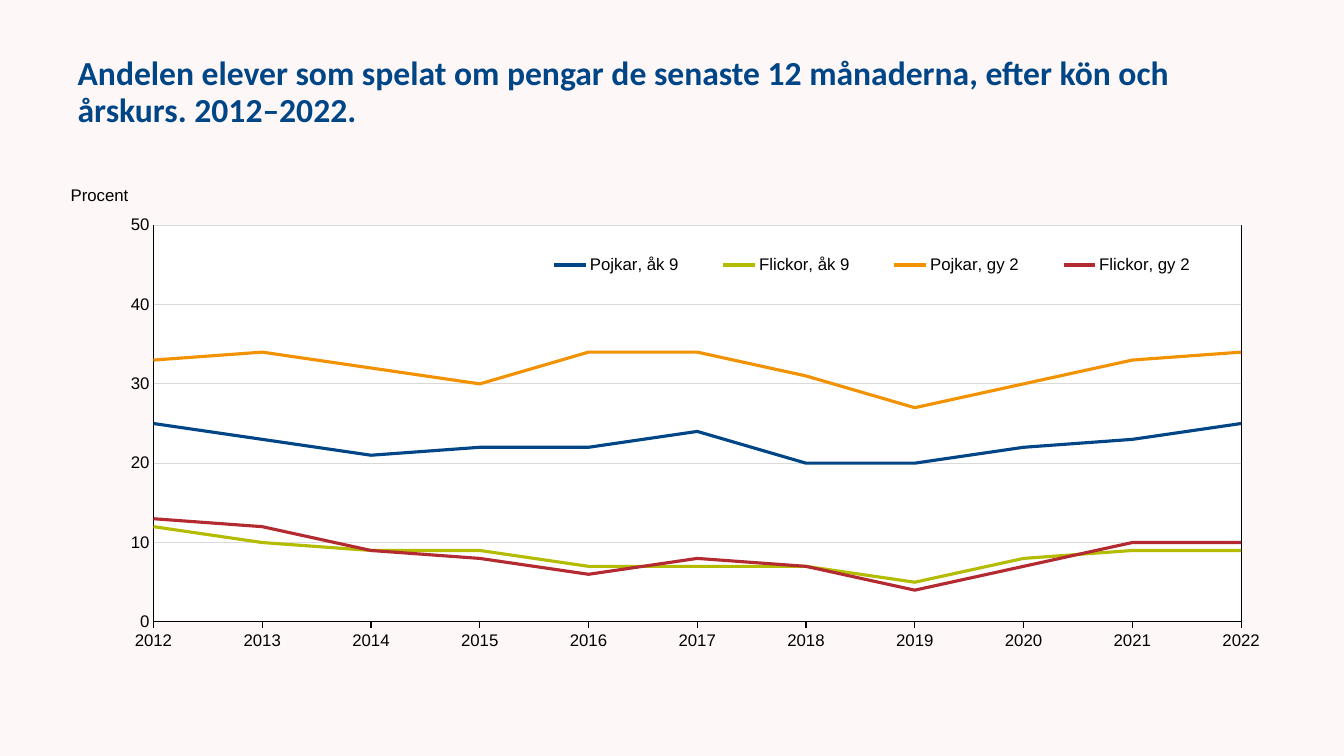
from lxml.etree import SubElement
from pptx import Presentation
from pptx.chart.data import CategoryChartData
from pptx.dml.color import RGBColor
from pptx.enum.chart import XL_CHART_TYPE, XL_LEGEND_POSITION, XL_TICK_MARK
from pptx.enum.text import MSO_ANCHOR, MSO_AUTO_SIZE, PP_ALIGN
from pptx.oxml import parse_xml
from pptx.oxml.ns import nsdecls, qn
from pptx.util import Inches, Pt

YEARS = [str(year) for year in range(2012, 2023)]
GROUPS = [
    ("Pojkar, åk 9", "004687", [25, 23, 21, 22, 22, 24, 20, 20, 22, 23, 25]),
    ("Flickor, åk 9", "B3BC00", [12, 10, 9, 9, 7, 7, 7, 5, 8, 9, 9]),
    ("Pojkar, gy 2", "F29200", [33, 34, 32, 30, 34, 34, 31, 27, 30, 33, 34]),
    ("Flickor, gy 2", "B32B31", [13, 12, 9, 8, 6, 8, 7, 4, 7, 10, 10]),
]


def color(hex_value):
    return RGBColor.from_string(hex_value)


def set_line(line, hex_value, points):
    line.color.rgb = color(hex_value)
    line.width = Pt(points)


def place(element, index, left, top, width=None, height=None, inner=False):
    for old in element.findall(qn("c:layout")):
        element.remove(old)
    layout = parse_xml(f"<c:layout {nsdecls('c')}/>")
    manual = SubElement(layout, qn("c:manualLayout"))
    settings = [("layoutTarget", "inner" if inner else None),
                ("xMode", "edge"), ("yMode", "edge"),
                ("x", left), ("y", top), ("w", width), ("h", height)]
    for tag, value in settings:
        if value is not None:
            SubElement(manual, qn(f"c:{tag}")).set("val", str(value))
    element.insert(index, layout)


class SlideBuilder:
    heading_font = "Calibri"
    chart_font = "Arial"
    blue, black, grid, white = "004687", "000000", "D9D9D9", "FFFFFF"
    background = "FEF7F7"

    def __init__(self, presentation):
        self.slide = presentation.slides.add_slide(presentation.slide_layouts[5])
        fill = self.slide.background.fill
        fill.solid()
        fill.fore_color.rgb = color(self.background)

    def style_font(self, font, name, size, hex_value, bold=False):
        font.name = name
        font.size = Pt(size)
        font.bold = bold
        font.color.rgb = color(hex_value)

    def title(self, text, left, top, width, height):
        heading = self.slide.shapes.title
        heading.left, heading.top = Inches(left), Inches(top)
        heading.width, heading.height = Inches(width), Inches(height)
        frame = heading.text_frame
        frame.text = text
        frame.word_wrap = True
        frame.auto_size = MSO_AUTO_SIZE.NONE
        frame.vertical_anchor = MSO_ANCHOR.MIDDLE
        paragraph = frame.paragraphs[0]
        paragraph.alignment = PP_ALIGN.LEFT
        paragraph.line_spacing = 0.9
        self.style_font(paragraph.font, self.heading_font, 24, self.blue, True)

    def line_chart(self, years, groups, unit, left, top, width, height):
        data = CategoryChartData(number_format="0")
        data.categories = years
        for name, _, shares in groups:
            data.add_series(name, shares)
        chart = self.slide.shapes.add_chart(
            XL_CHART_TYPE.LINE, Inches(left), Inches(top),
            Inches(width), Inches(height), data).chart
        chart.has_title = False
        self.style_font(chart.font, self.chart_font, 12, self.black)
        chart.plots[0].vary_by_categories = False
        for series, (_, hex_value, _) in zip(chart.plots[0].series, groups):
            series.smooth = False
            set_line(series.format.line, hex_value, 2.25)
        self.axes(chart, unit)
        self.legend(chart)
        self.plot_area(chart)

    def axes(self, chart, unit):
        year_axis, share_axis = chart.category_axis, chart.value_axis
        for axis, tick in ((year_axis, XL_TICK_MARK.OUTSIDE),
                           (share_axis, XL_TICK_MARK.NONE)):
            axis.major_tick_mark = tick
            axis.minor_tick_mark = XL_TICK_MARK.NONE
            set_line(axis.format.line, self.black, 0.75)
            self.style_font(axis.tick_labels.font, self.chart_font, 12, self.black)
        share_axis.minimum_scale = 0
        share_axis.maximum_scale = 50
        share_axis.major_unit = 10
        share_axis.tick_labels.number_format = "0"
        share_axis.tick_labels.number_format_is_linked = False
        set_line(share_axis.major_gridlines.format.line, self.grid, 0.75)
        crosses = chart.plots[0]._element.getparent().find(
            f"{qn('c:valAx')}/{qn('c:crosses')}")
        crosses.addnext(parse_xml(
            f'<c:crossBetween {nsdecls("c")} val="midCat"/>'))
        frame = share_axis.axis_title.text_frame
        frame.text = unit
        self.style_font(frame.paragraphs[0].font, self.chart_font, 12, self.black)
        body = frame._txBody.find(qn("a:bodyPr"))
        body.set("rot", "0")
        body.set("vert", "horz")
        place(share_axis.axis_title._element, 1, 0.0, 0.01)

    def legend(self, chart):
        chart.has_legend = True
        chart.legend.position = XL_LEGEND_POSITION.RIGHT
        chart.legend.include_in_layout = False
        self.style_font(chart.legend.font, self.chart_font, 12, self.black)
        place(chart.legend._element, 1, 0.37, 0.14, 0.59, 0.08)

    def plot_area(self, chart):
        area = chart.plots[0]._element.getparent()
        place(area, 0, 0.071, 0.099, 0.899, 0.805, inner=True)
        area.append(parse_xml(
            f"<c:spPr {nsdecls('c', 'a')}>"
            f'<a:solidFill><a:srgbClr val="{self.white}"/></a:solidFill>'
            f'<a:ln w="{Pt(0.75)}"><a:solidFill><a:srgbClr val="{self.black}"/>'
            "</a:solidFill></a:ln></c:spPr>"))


def main():
    presentation = Presentation()
    presentation.slide_width = Inches(13.33)
    presentation.slide_height = Inches(7.5)
    builder = SlideBuilder(presentation)
    builder.title("Andelen elever som spelat om pengar de senaste 12 månaderna, "
                  "efter kön och årskurs. 2012–2022.", 0.67, 0.3, 12, 1.25)
    builder.line_chart(YEARS, GROUPS, "Procent", 0.67, 1.75, 12, 4.89)
    presentation.save("out.pptx")


if __name__ == "__main__":
    main()
